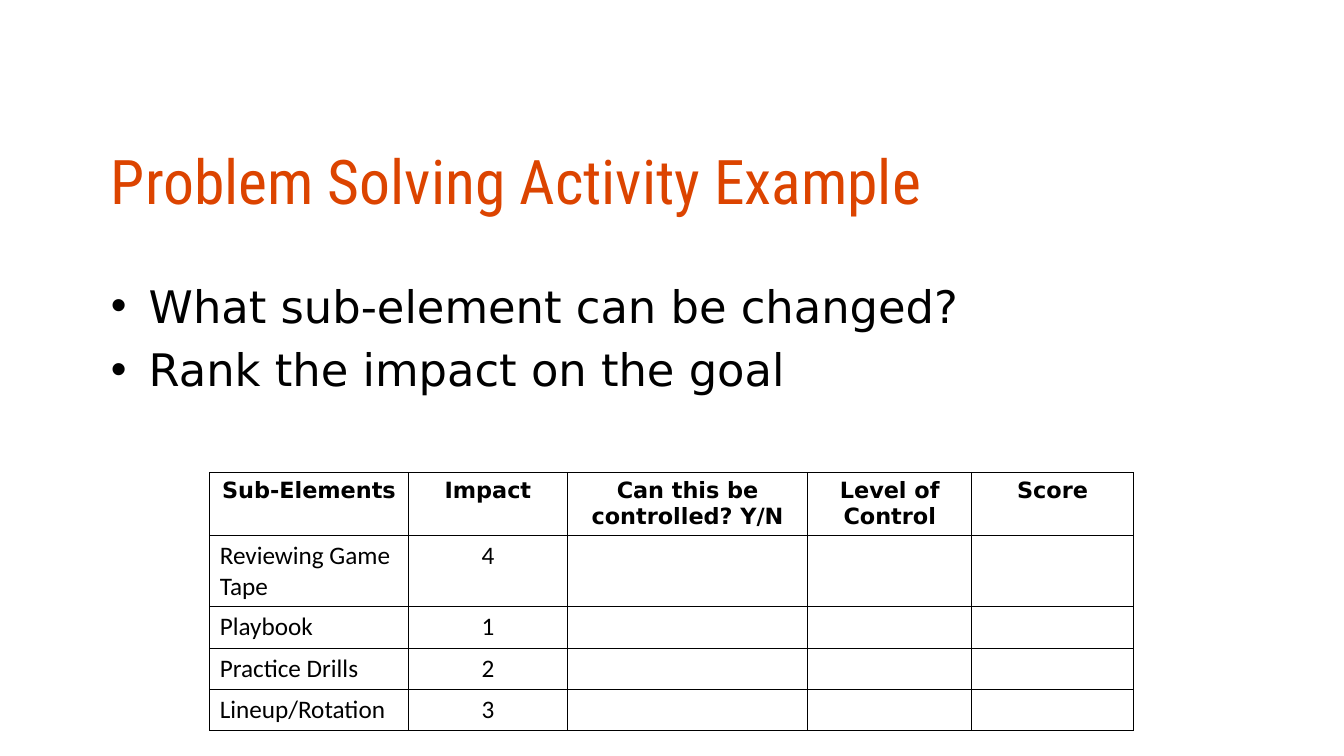
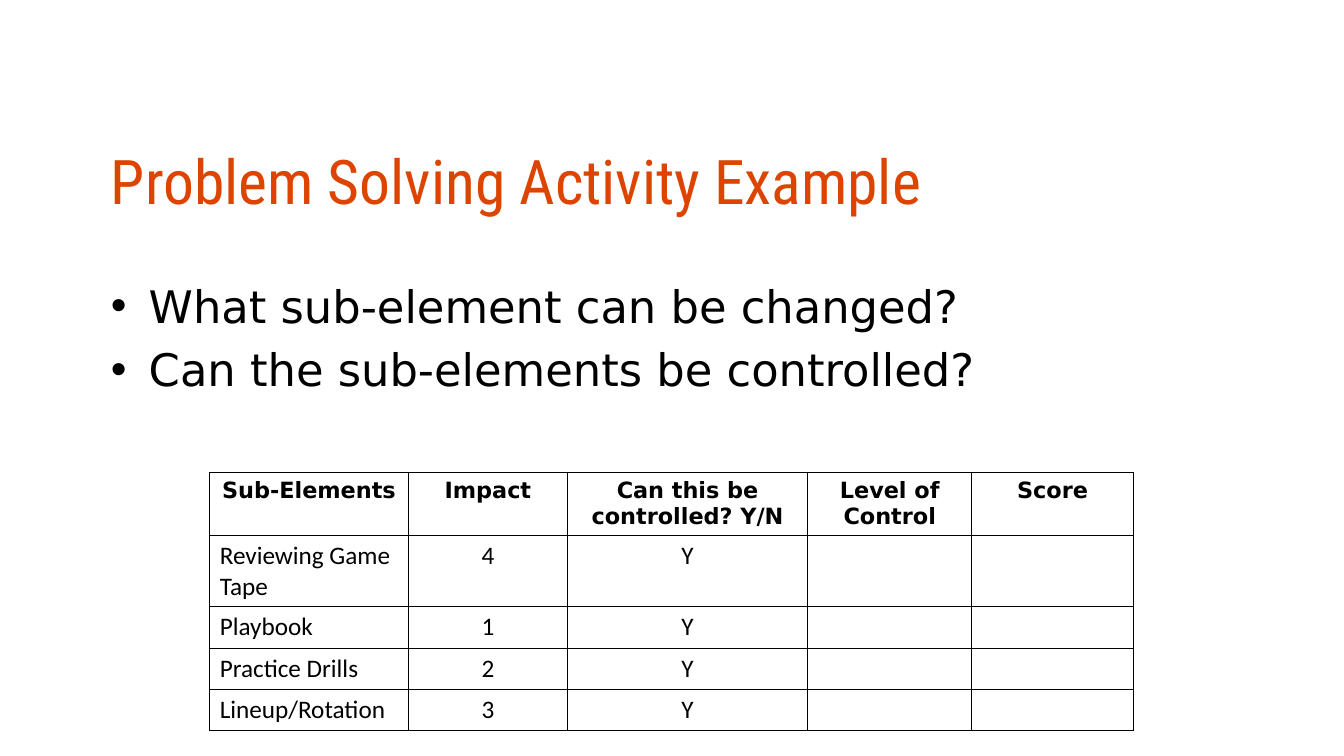
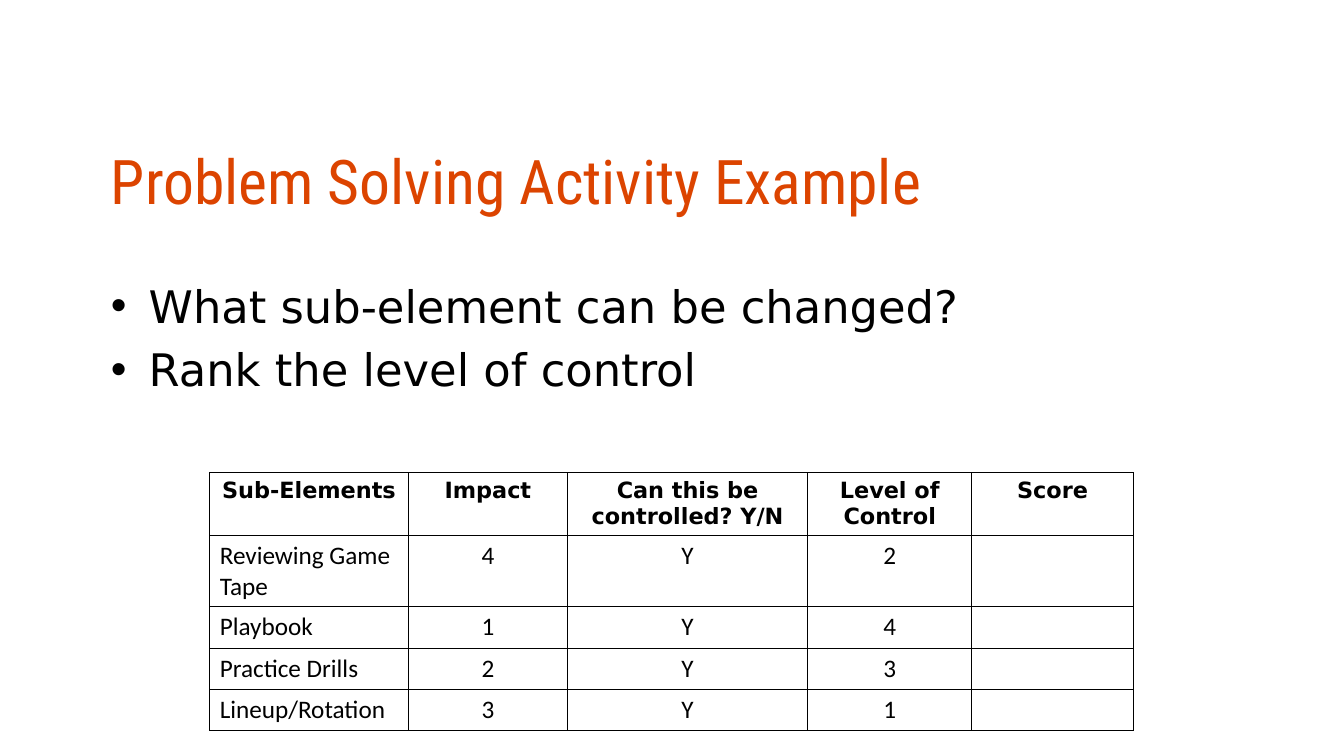
from dataclasses import dataclass

from pptx import Presentation
from pptx.dml.color import RGBColor
from pptx.enum.text import MSO_ANCHOR, MSO_AUTO_SIZE, PP_ALIGN
from pptx.oxml import parse_xml
from pptx.oxml.ns import nsdecls
from pptx.util import Inches, Pt


@dataclass(frozen=True)
class Theme:
    """Colours, fonts and type sizes shared by all slides."""
    accent: str = "DC4400"
    ink: str = "000000"
    title_font: str = "Roboto Condensed"
    text_font: str = "DejaVu Sans"
    cell_font: str = "Calibri"
    title_size: int = 44
    bullet_size: int = 32
    header_size: int = 16
    cell_size: int = 18
    bullet_gap: int = 7
    border_width: int = 1


@dataclass(frozen=True)
class SubElement:
    name: str
    impact: str
    controlled: str
    control_level: str
    score: str = ""

    def values(self) -> list[str]:
        return [self.name, self.impact, self.controlled, self.control_level, self.score]


@dataclass(frozen=True)
class Step:
    """One stage of the activity: its task and how many columns are filled in."""
    task: str
    filled_columns: int


THEME = Theme()
TITLE = "Problem Solving Activity Example"
QUESTION = "What sub-element can be changed?"
HEADERS = ["Sub-Elements", "Impact", "Can this be controlled? Y/N", "Level of Control", "Score"]
SUB_ELEMENTS = [
    SubElement("Reviewing Game Tape", "4", "Y", "2"),
    SubElement("Playbook", "1", "Y", "4"),
    SubElement("Practice Drills", "2", "Y", "3"),
    SubElement("Lineup/Rotation", "3", "Y", "1"),
]
STEPS = [
    Step("Rank the impact on the goal", 2),
    Step("Can the sub-elements be controlled?", 3),
    Step("Rank the level of control", 4),
]
COLUMN_WIDTHS = [1.97, 1.58, 2.38, 1.63, 1.6]
ROW_HEIGHTS = [0.62, 0.7, 0.41, 0.41, 0.41]


def write(paragraph, text: str, *, font: str, size: int, color: str = THEME.ink,
          bold: bool = False, align=PP_ALIGN.LEFT, before: int = 0) -> None:
    paragraph.alignment = align
    paragraph.space_before = Pt(before)
    run = paragraph.add_run()
    run.text = text
    run.font.name = font
    run.font.size = Pt(size)
    run.font.bold = bold
    run.font.color.rgb = RGBColor.from_string(color)


def place(shape, left: float, top: float, width: float, height: float) -> None:
    shape.left, shape.top = Inches(left), Inches(top)
    shape.width, shape.height = Inches(width), Inches(height)


def format_cell(cell) -> None:
    """Black border on every side, no fill."""
    properties = cell._tc.get_or_add_tcPr()
    for side in ("lnL", "lnR", "lnT", "lnB"):
        properties.append(parse_xml(
            f'<a:{side} {nsdecls("a")} w="{Pt(THEME.border_width)}"><a:solidFill>'
            f'<a:srgbClr val="{THEME.ink}"/></a:solidFill></a:{side}>'))
    cell.fill.background()


def add_heading(slide) -> None:
    title = slide.shapes.title
    place(title, 1, 1.37, 11.33, 1.3)
    title.text_frame.vertical_anchor = MSO_ANCHOR.TOP
    title.text_frame.auto_size = MSO_AUTO_SIZE.NONE
    write(title.text_frame.paragraphs[0], TITLE, font=THEME.title_font,
          size=THEME.title_size, color=THEME.accent)


def add_bullets(slide, bullets: list[str]) -> None:
    body = slide.placeholders[1]
    place(body, 1, 2.67, 11.33, 4.03)
    frame = body.text_frame
    frame.auto_size = MSO_AUTO_SIZE.NONE
    frame.margin_top = Inches(0.09)
    for index, bullet in enumerate(bullets):
        paragraph = frame.add_paragraph() if index else frame.paragraphs[0]
        write(paragraph, bullet, font=THEME.text_font, size=THEME.bullet_size,
              before=THEME.bullet_gap if index else 0)


def add_score_table(slide, filled_columns: int) -> None:
    rows = [HEADERS] + [element.values() for element in SUB_ELEMENTS]
    table = slide.shapes.add_table(
        len(rows), len(HEADERS), Inches(2.08), Inches(4.69),
        Inches(sum(COLUMN_WIDTHS)), Inches(sum(ROW_HEIGHTS))).table
    table.first_row = table.horz_banding = False
    for column, width in zip(table.columns, COLUMN_WIDTHS):
        column.width = Inches(width)
    for row, height in zip(table.rows, ROW_HEIGHTS):
        row.height = Inches(height)

    for row_index, values in enumerate(rows):
        header = row_index == 0
        for column_index, value in enumerate(values):
            cell = table.cell(row_index, column_index)
            format_cell(cell)
            if header or column_index < filled_columns:
                write(cell.text_frame.paragraphs[0], value, bold=header,
                      font=THEME.text_font if header else THEME.cell_font,
                      size=THEME.header_size if header else THEME.cell_size,
                      align=PP_ALIGN.CENTER if header or column_index else PP_ALIGN.LEFT)


def main() -> None:
    deck = Presentation()
    deck.slide_width, deck.slide_height = Inches(13.33), Inches(7.5)
    for step in STEPS:
        slide = deck.slides.add_slide(deck.slide_layouts[1])
        add_heading(slide)
        add_bullets(slide, [QUESTION, step.task])
        add_score_table(slide, step.filled_columns)
    deck.save("out.pptx")


if __name__ == "__main__":
    main()
